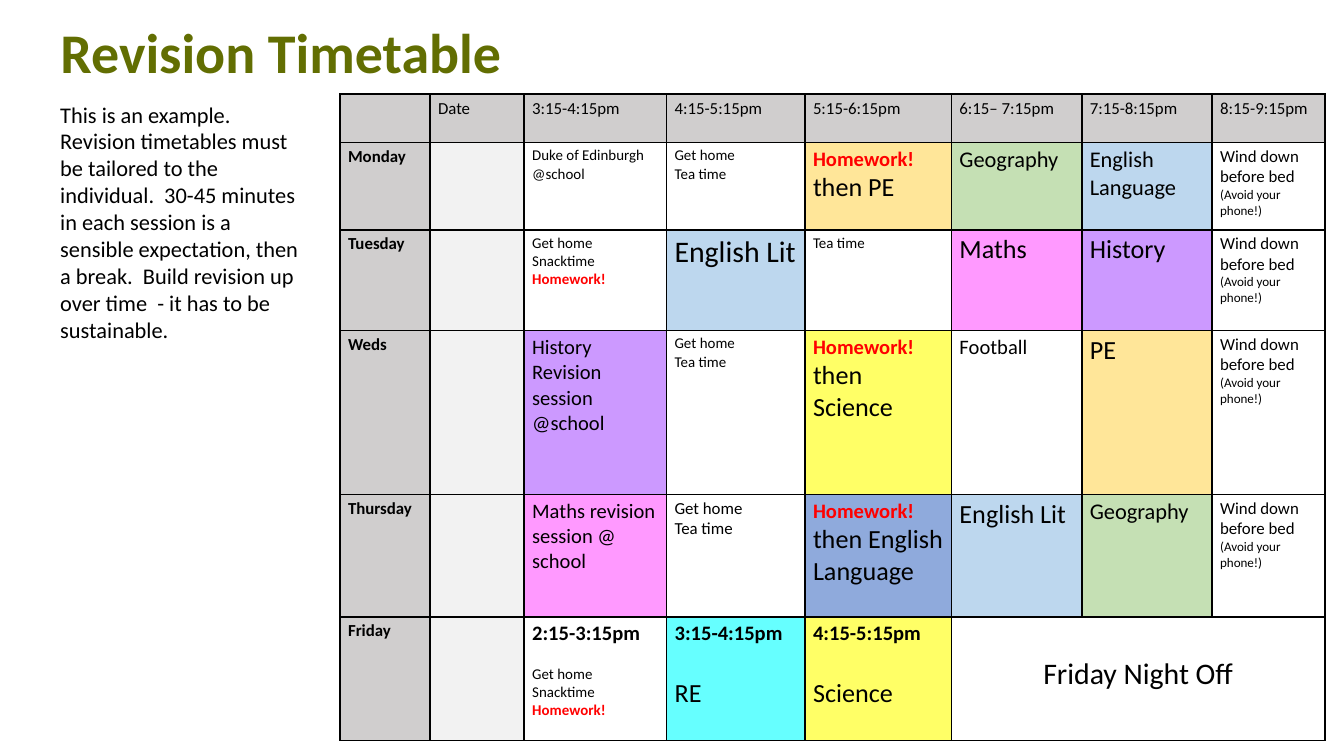
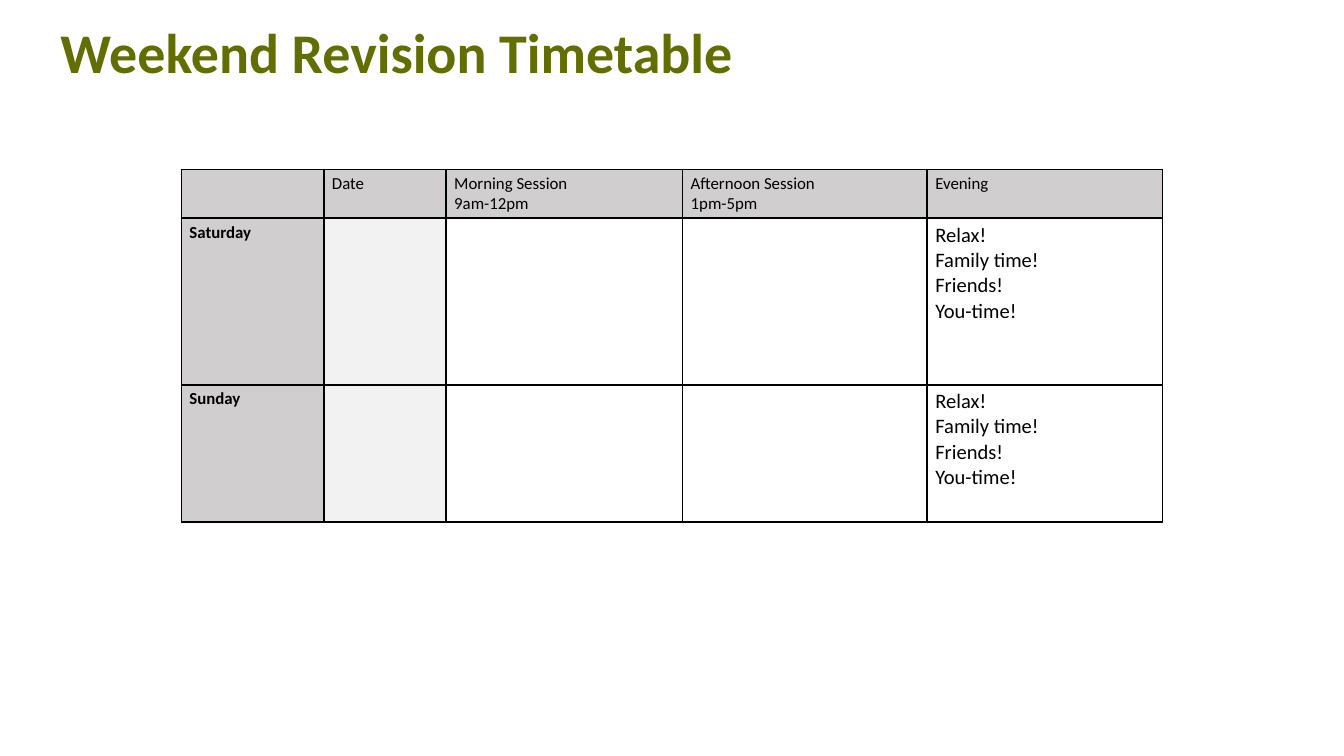
import pptx
import pptx.util
import pptx.dml.color
import pptx.enum.text
import pptx.oxml
import pptx.oxml.ns
from lxml import etree

Inches = pptx.util.Inches
Pt = pptx.util.Pt
RGBColor = pptx.dml.color.RGBColor
PP_ALIGN = pptx.enum.text.PP_ALIGN
MSO_ANCHOR = pptx.enum.text.MSO_ANCHOR
MSO_AUTO_SIZE = pptx.enum.text.MSO_AUTO_SIZE

SLIDE_WIDTH = Inches(10)
SLIDE_HEIGHT = SLIDE_WIDTH * 9 // 16

FONT = "Calibri"
BLACK = RGBColor(0x00, 0x00, 0x00)
WHITE = RGBColor(0xFF, 0xFF, 0xFF)
OLIVE = RGBColor(0x62, 0x6E, 0x02)
RED = RGBColor(0xFF, 0x00, 0x00)
HEADER_GREY = RGBColor(0xD0, 0xCE, 0xCE)
DATE_GREY = RGBColor(0xF2, 0xF2, 0xF2)
AMBER = RGBColor(0xFF, 0xE6, 0x99)
GREEN = RGBColor(0xC5, 0xE0, 0xB4)
PALE_BLUE = RGBColor(0xBD, 0xD7, 0xEE)
BLUE = RGBColor(0x8F, 0xAA, 0xDC)
PINK = RGBColor(0xFF, 0x99, 0xFF)
PURPLE = RGBColor(0xCC, 0x99, 0xFF)
YELLOW = RGBColor(0xFF, 0xFF, 0x66)
CYAN = RGBColor(0x66, 0xFF, 0xFF)


def line(text, size, bold=False, color=BLACK, gap=0):
    return {"text": text, "gap": gap,
            "font": {"name": FONT, "size": Pt(size), "bold": bold}, "color": color}


def entry(text, size, fill=WHITE):
    return [line(part, size) for part in text.split("\n")], fill


def homework(size):
    return line("Homework!", size, True, RED)


def homework_then(subject, fill):
    return [homework(11), line("then " + subject, 14)], fill


def friday_session(time, subject, fill):
    return [line(time, 11, True), line(subject, 14, gap=17)], fill


WIND_DOWN = [line("Wind down before bed", 9), line("(Avoid your phone!)", 7)], WHITE
RELAX = entry("Relax!\nFamily time!\nFriends!\nYou-time!", 11)
FREE = [], WHITE
HOME = "Get home\nTea time"
SNACK = "Get home\nSnacktime"

NOTE = ("This is an example.  Revision timetables must be tailored to the individual.  "
        "30-45 minutes in each session is a sensible expectation, then a break.  "
        "Build revision up over time  - it has to be sustainable.")

WEEK = {
    "title": "Revision Timetable",
    "note": NOTE,
    "origin": (2.53, 0.7),
    "columns": [0.67, 0.7, 1.06, 1.03, 1.09, 0.97, 0.97, 0.84],
    "rows": [0.36, 0.65, 0.75, 1.22, 0.91, 0.92],
    "headings": ["3:15-4:15pm", "4:15-5:15pm", "5:15-6:15pm",
                 "6:15– 7:15pm", "7:15-8:15pm", "8:15-9:15pm"],
    "days": [
        ("Monday", [
            entry("Duke of Edinburgh @school", 8),
            entry(HOME, 8),
            homework_then("PE", AMBER),
            entry("Geography", 12, GREEN),
            entry("English Language", 12, PALE_BLUE),
            WIND_DOWN]),
        ("Tuesday", [
            (entry(SNACK, 8)[0] + [homework(8)], WHITE),
            entry("English Lit", 16, PALE_BLUE),
            entry("Tea time", 8),
            entry("Maths", 14, PINK),
            entry("History", 14, PURPLE),
            WIND_DOWN]),
        ("Weds", [
            entry("History Revision session @school", 11, PURPLE),
            entry(HOME, 8),
            homework_then("Science", YELLOW),
            entry("Football", 11),
            entry("PE", 14, AMBER),
            WIND_DOWN]),
        ("Thursday", [
            entry("Maths revision session @ school", 11, PINK),
            entry(HOME, 9),
            homework_then("English Language", BLUE),
            entry("English Lit", 14, PALE_BLUE),
            entry("Geography", 12, GREEN),
            WIND_DOWN]),
        ("Friday", [
            ([line("2:15-3:15pm", 11, True), line("Get home", 8, gap=10),
              line("Snacktime", 8), homework(8)], WHITE),
            friday_session("3:15-4:15pm", "RE", CYAN),
            friday_session("4:15-5:15pm", "Science", YELLOW),
            entry("Friday Night Off", 16),
            FREE, FREE]),
    ],
    "merged": ((5, 5), (5, 7)),
}

WEEKEND = {
    "title": "Weekend Revision Timetable",
    "origin": (1.35, 1.26),
    "columns": [1.06, 0.91, 1.76, 1.82, 1.75],
    "rows": [0.36, 1.24, 1.02],
    "headings": ["Morning Session\n9am-12pm", "Afternoon Session\n1pm-5pm", "Evening"],
    "days": [(day, [FREE, FREE, RELAX]) for day in ("Saturday", "Sunday")],
}


def set_values(target, values):
    for name, value in values.items():
        setattr(target, name, value)


def write_lines(text_frame, lines):
    for index, item in enumerate(lines):
        paragraph = text_frame.paragraphs[0] if index == 0 else text_frame.add_paragraph()
        if item["gap"]:
            paragraph.space_before = Pt(item["gap"])
        run = paragraph.add_run()
        run.text = item["text"]
        set_values(run.font, item["font"])
        run.font.color.rgb = item["color"]


def add_borders(cell):
    properties = cell._tc.get_or_add_tcPr()
    for side in ("lnL", "lnR", "lnT", "lnB"):
        border = etree.SubElement(properties, pptx.oxml.ns.qn("a:" + side), w=str(Pt(1)))
        fill = etree.SubElement(border, pptx.oxml.ns.qn("a:solidFill"))
        etree.SubElement(fill, pptx.oxml.ns.qn("a:srgbClr"), val=str(BLACK))


def fill_cell(cell, lines, fill):
    add_borders(cell)
    cell.fill.solid()
    cell.fill.fore_color.rgb = fill
    set_values(cell, {"margin_left": Inches(0.06), "margin_right": Inches(0.06),
                      "margin_top": Inches(0.03), "margin_bottom": Inches(0.03)})
    if lines:
        write_lines(cell.text_frame, lines)
    else:
        cell.text_frame.paragraphs[0]._p.get_or_add_endParaRPr().set("sz", "900")


def add_title(slide, text):
    title = slide.shapes.title
    set_values(title, {"left": Inches(0.35), "top": Inches(0.14),
                       "width": Inches(9.19), "height": Inches(0.55)})
    set_values(title.text_frame, {"vertical_anchor": MSO_ANCHOR.BOTTOM, "word_wrap": True,
                                  "auto_size": MSO_AUTO_SIZE.NONE})
    write_lines(title.text_frame, [line(text, 30, True, OLIVE)])
    set_values(title.text_frame.paragraphs[0],
               {"alignment": PP_ALIGN.LEFT, "line_spacing": 0.9})


def add_note(slide, text):
    note = slide.shapes.add_textbox(Inches(0.35), Inches(0.7), Inches(2.03), Inches(1.92))
    set_values(note.text_frame, {"word_wrap": True,
                                 "auto_size": MSO_AUTO_SIZE.SHAPE_TO_FIT_TEXT})
    write_lines(note.text_frame, [line(text, 12)])


def add_timetable(slide, content):
    columns, rows = content["columns"], content["rows"]
    left, top = content["origin"]
    table = slide.shapes.add_table(len(rows), len(columns), Inches(left), Inches(top),
                                   Inches(sum(columns)), Inches(sum(rows))).table
    set_values(table, {"first_row": False, "horz_banding": False})
    for column, width in zip(table.columns, columns):
        column.width = Inches(width)
    for row, height in zip(table.rows, rows):
        row.height = Inches(height)

    grid = [[([], HEADER_GREY)] + [entry(heading, 9, HEADER_GREY)
                                   for heading in ["Date"] + content["headings"]]]
    for day, sessions in content["days"]:
        grid.append([([line(day, 9, True)], HEADER_GREY), ([], DATE_GREY)] + sessions)
    for row_index, row_cells in enumerate(grid):
        for column_index, (lines, fill) in enumerate(row_cells):
            fill_cell(table.cell(row_index, column_index), lines, fill)

    if "merged" in content:
        first, last = content["merged"]
        cell = table.cell(*first)
        cell.merge(table.cell(*last))
        set_values(cell, {"vertical_anchor": MSO_ANCHOR.MIDDLE,
                          "margin_bottom": Inches(0.09)})
        cell.text_frame.paragraphs[0].alignment = PP_ALIGN.CENTER


def main():
    presentation = pptx.Presentation()
    presentation.slide_width = SLIDE_WIDTH
    presentation.slide_height = SLIDE_HEIGHT
    for content in (WEEK, WEEKEND):
        slide = presentation.slides.add_slide(presentation.slide_layouts[5])
        add_title(slide, content["title"])
        add_timetable(slide, content)
        if "note" in content:
            add_note(slide, content["note"])
    presentation.save("out.pptx")


if __name__ == "__main__":
    main()
